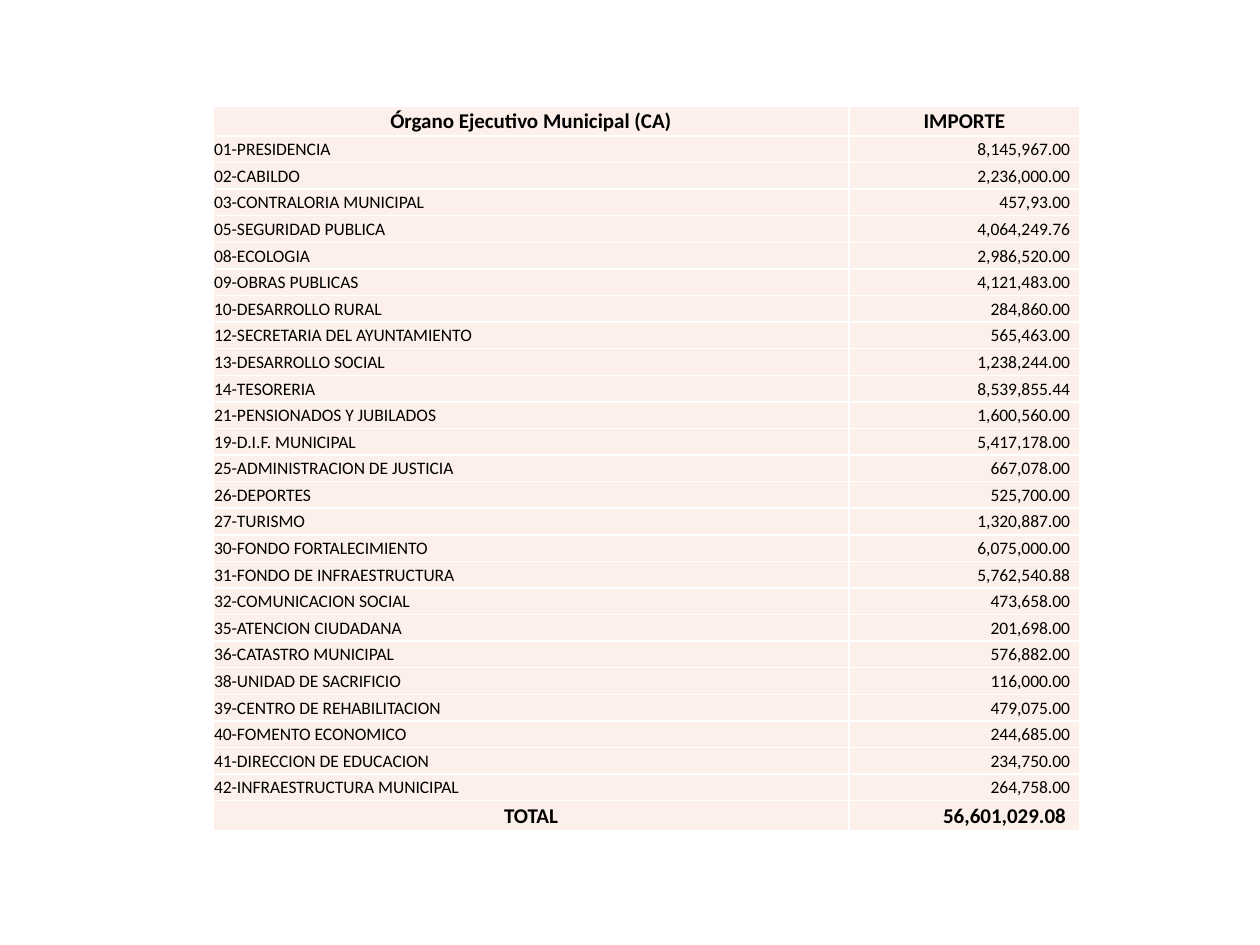
import dataclasses

import lxml.etree
import pptx
import pptx.dml.color
import pptx.enum.text
import pptx.oxml.ns
import pptx.util

PX = pptx.util.Inches(1) / 126
ALIGN = pptx.enum.text.PP_ALIGN


@dataclasses.dataclass(frozen=True)
class Theme:
    font: str = "Calibri"
    ink: str = "000000"
    fill: str = "FDEFE9"
    rule: str = "FFFFFF"
    rule_width: int = 1
    heading_size: int = 12
    body_size: int = 10


THEME = Theme()

HEADINGS = ("Órgano Ejecutivo Municipal (CA)", "IMPORTE")
BUDGET = [
    ("01-PRESIDENCIA", "8,145,967.00"),
    ("02-CABILDO", "2,236,000.00"),
    ("03-CONTRALORIA MUNICIPAL", "457,93.00"),
    ("05-SEGURIDAD PUBLICA", "4,064,249.76"),
    ("08-ECOLOGIA", "2,986,520.00"),
    ("09-OBRAS PUBLICAS", "4,121,483.00"),
    ("10-DESARROLLO RURAL", "284,860.00"),
    ("12-SECRETARIA DEL AYUNTAMIENTO", "565,463.00"),
    ("13-DESARROLLO SOCIAL", "1,238,244.00"),
    ("14-TESORERIA", "8,539,855.44"),
    ("21-PENSIONADOS Y JUBILADOS", "1,600,560.00"),
    ("19-D.I.F. MUNICIPAL", "5,417,178.00"),
    ("25-ADMINISTRACION DE JUSTICIA", "667,078.00"),
    ("26-DEPORTES", "525,700.00"),
    ("27-TURISMO", "1,320,887.00"),
    ("30-FONDO FORTALECIMIENTO", "6,075,000.00"),
    ("31-FONDO DE INFRAESTRUCTURA", "5,762,540.88"),
    ("32-COMUNICACION SOCIAL", "473,658.00"),
    ("35-ATENCION CIUDADANA", "201,698.00"),
    ("36-CATASTRO MUNICIPAL", "576,882.00"),
    ("38-UNIDAD DE SACRIFICIO", "116,000.00"),
    ("39-CENTRO DE REHABILITACION", "479,075.00"),
    ("40-FOMENTO ECONOMICO", "244,685.00"),
    ("41-DIRECCION DE EDUCACION", "234,750.00"),
    ("42-INFRAESTRUCTURA MUNICIPAL", "264,758.00"),
]
TOTAL = ("TOTAL", "56,601,029.08")


def px(length):
    return pptx.util.Emu(round(length * PX))


def color(value):
    return pptx.dml.color.RGBColor.from_string(value)


def add_borders(cell):
    properties = cell._tc.get_or_add_tcPr()
    for position, side in enumerate(("lnL", "lnR", "lnT", "lnB")):
        line = lxml.etree.Element(pptx.oxml.ns.qn(f"a:{side}"))
        line.set("w", str(pptx.util.Pt(THEME.rule_width)))
        solid = lxml.etree.SubElement(line, pptx.oxml.ns.qn("a:solidFill"))
        shade = lxml.etree.SubElement(solid, pptx.oxml.ns.qn("a:srgbClr"))
        shade.set("val", THEME.rule)
        properties.insert(position, line)


def fill_cell(cell, text, align, strong=False, right_inset=1):
    cell.margin_left = cell.margin_top = px(1)
    cell.margin_right = px(right_inset)
    cell.margin_bottom = 0
    cell.vertical_anchor = pptx.enum.text.MSO_ANCHOR.MIDDLE
    cell.fill.solid()
    cell.fill.fore_color.rgb = color(THEME.fill)
    add_borders(cell)

    para = cell.text_frame.paragraphs[0]
    para.alignment = align
    span = para.add_run()
    span.text = text
    span.font.name = THEME.font
    span.font.size = pptx.util.Pt(THEME.heading_size if strong else THEME.body_size)
    span.font.bold = strong
    span.font.color.rgb = color(THEME.ink)


def add_budget_table(page, left, top, width, height):
    amount_width, heading_height = 231, 30
    last = len(BUDGET) + 1
    frame = page.shapes.add_table(last + 1, 2, px(left), px(top), px(width), px(height))
    table = frame.table
    table.columns[0].width = px(width - amount_width)
    table.columns[1].width = px(amount_width)

    body_height = (height - 2 * heading_height) / len(BUDGET)
    for index, row in enumerate(table.rows):
        row.height = px(heading_height if index in (0, last) else body_height)

    for column, heading in enumerate(HEADINGS):
        fill_cell(table.cell(0, column), heading, ALIGN.CENTER, strong=True)
    for index, (department, amount) in enumerate(BUDGET, start=1):
        fill_cell(table.cell(index, 0), department, ALIGN.LEFT)
        fill_cell(table.cell(index, 1), amount, ALIGN.RIGHT, right_inset=10)
    fill_cell(table.cell(last, 0), TOTAL[0], ALIGN.CENTER, strong=True)
    fill_cell(table.cell(last, 1), TOTAL[1], ALIGN.RIGHT, strong=True, right_inset=14)


def main():
    deck = pptx.Presentation()
    deck.slide_width, deck.slide_height = px(1260), px(945)
    page = deck.slides.add_slide(deck.slide_layouts[6])
    add_budget_table(page, left=213, top=106, width=867, height=725)
    deck.save("out.pptx")


if __name__ == "__main__":
    main()
